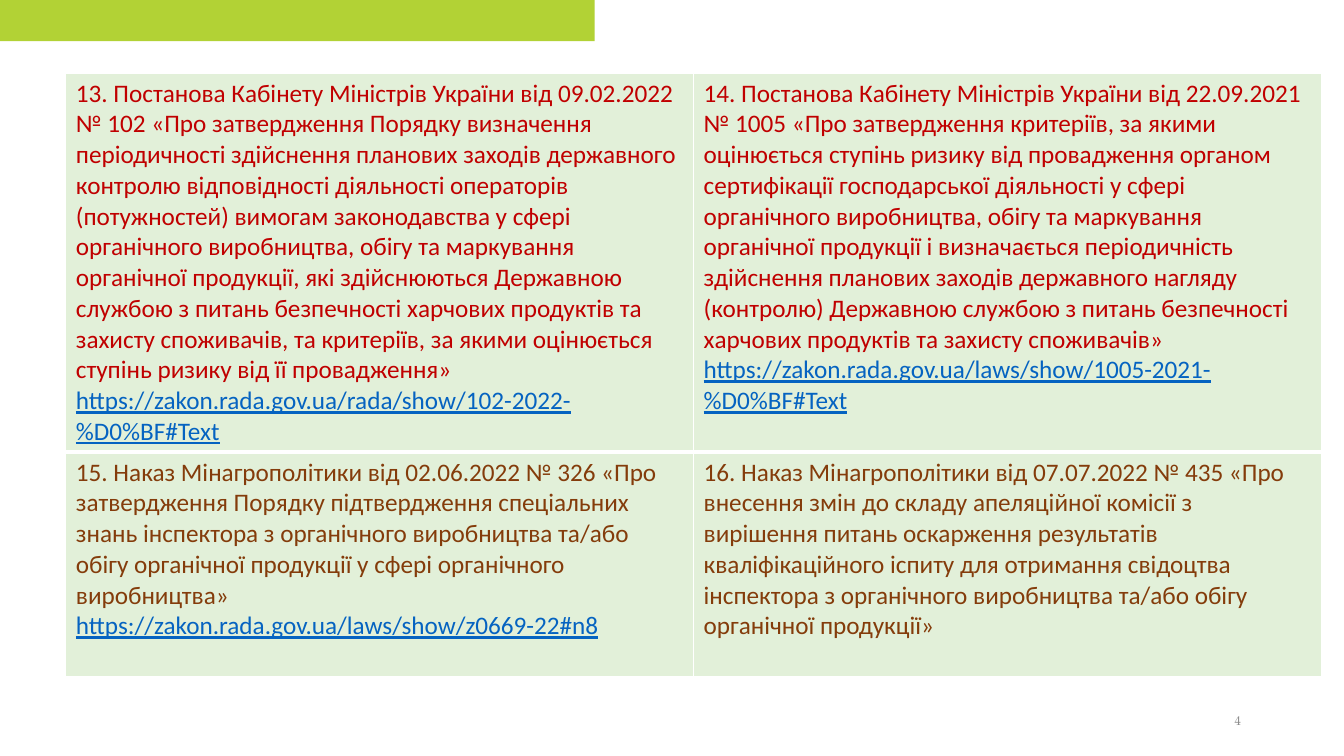
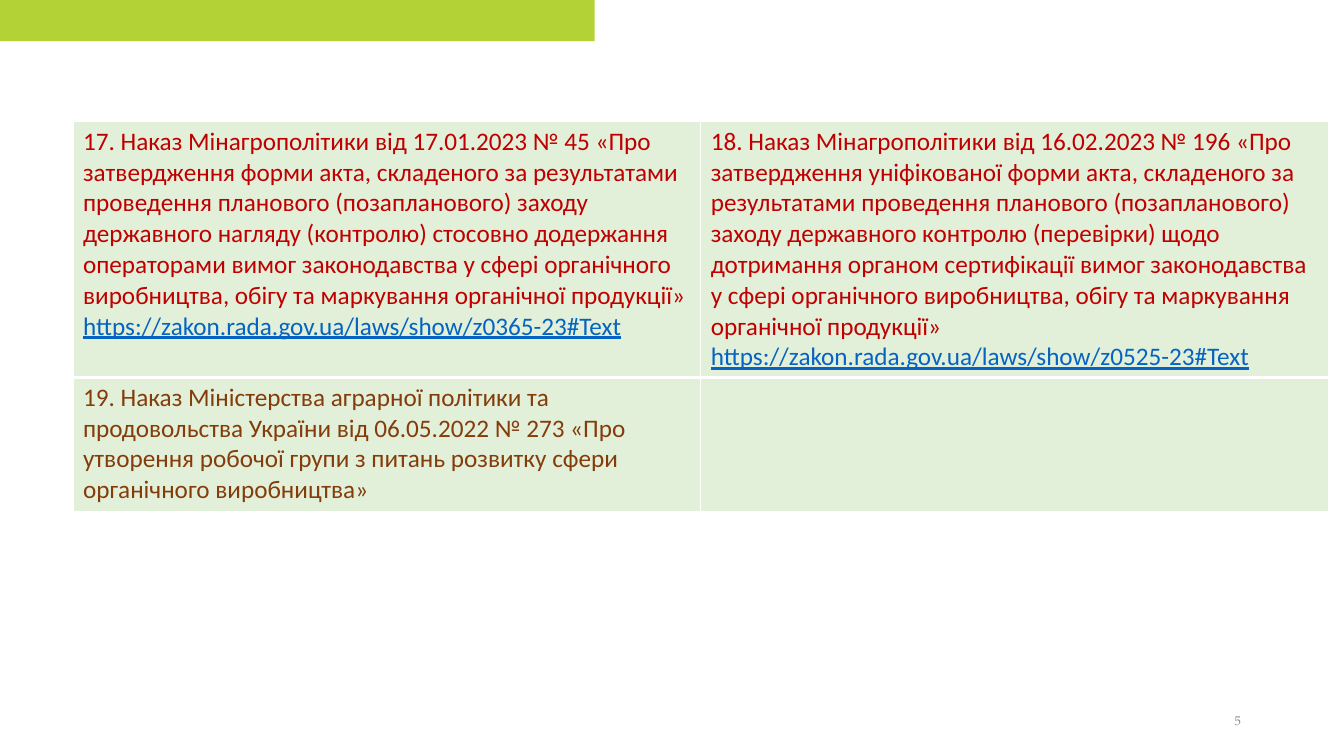
"""Build two slides listing the legal acts on organic production."""
from lxml import etree
from pptx import Presentation
from pptx.dml.color import RGBColor
from pptx.enum.shapes import MSO_SHAPE
from pptx.enum.text import MSO_ANCHOR, PP_ALIGN
from pptx.oxml.ns import qn
from pptx.util import Cm, Pt

RECTANGLE = MSO_SHAPE.RECTANGLE
MIDDLE = MSO_ANCHOR.MIDDLE
RIGHT = PP_ALIGN.RIGHT

COLORS = {
    "band": "B2D235",
    "cell": "E2F0D9",
    "border": "FFFFFF",
    "link": "0563C1",
    "number": "8C8C8C",
}
ROW_COLORS = ["C00000", "843C0B"]
LINK_START = "https://"
COLUMN_WIDTH = Cm(15.82)

PAGES = [
    {
        "number": 4,
        "left": 1.66,
        "top": 1.84,
        "heights": [9.55, 5.66],
        "rows": [
            [
                [
                    "13. Постанова Кабінету Міністрів України від 09.02.2022 № 102 «Про затвердження Порядку визначення періодичності здійснення планових заходів державного контролю відповідності діяльності операторів (потужностей) вимогам законодавства у сфері органічного виробництва, обігу та маркування органічної продукції, які здійснюються Державною службою з питань безпечності харчових продуктів та захисту споживачів, та критеріїв, за якими оцінюється ступінь ризику від її провадження»",
                    "https://zakon.rada.gov.ua/rada/show/102-2022-%D0%BF#Text",
                ],
                [
                    "14. Постанова Кабінету Міністрів України від 22.09.2021 № 1005 «Про затвердження критеріїв, за якими оцінюється ступінь ризику від провадження органом сертифікації господарської діяльності у сфері органічного виробництва, обігу та маркування органічної продукції і визначається періодичність здійснення планових заходів державного нагляду (контролю) Державною службою з питань безпечності харчових продуктів та захисту споживачів»",
                    "https://zakon.rada.gov.ua/laws/show/1005-2021-%D0%BF#Text",
                ],
            ],
            [
                [
                    "15. Наказ Мінагрополітики від 02.06.2022 № 326 «Про затвердження Порядку підтвердження спеціальних знань інспектора з органічного виробництва та/або обігу органічної продукції у сфері органічного виробництва» https://zakon.rada.gov.ua/laws/show/z0669-22#n8",
                ],
                [
                    "16. Наказ Мінагрополітики від 07.07.2022 № 435 «Про внесення змін до складу апеляційної комісії з вирішення питань оскарження результатів кваліфікаційного іспиту для отримання свідоцтва",
                    "інспектора з органічного виробництва та/або обігу органічної продукції»",
                ],
            ],
        ],
    },
    {
        "number": 5,
        "left": 1.84,
        "top": 3.06,
        "heights": [6.45, 3.37],
        "rows": [
            [
                [
                    "17. Наказ Мінагрополітики від 17.01.2023 № 45 «Про затвердження форми акта, складеного за результатами проведення планового (позапланового) заходу державного нагляду (контролю) стосовно додержання операторами вимог законодавства у сфері органічного виробництва, обігу та маркування органічної продукції»",
                    "https://zakon.rada.gov.ua/laws/show/z0365-23#Text",
                ],
                [
                    "18. Наказ Мінагрополітики від 16.02.2023 № 196 «Про затвердження уніфікованої форми акта, складеного за результатами проведення планового (позапланового) заходу державного контролю (перевірки) щодо дотримання органом сертифікації вимог законодавства у сфері органічного виробництва, обігу та маркування органічної продукції» https://zakon.rada.gov.ua/laws/show/z0525-23#Text",
                ],
            ],
            [
                [
                    "19. Наказ Міністерства аграрної політики та продовольства України від 06.05.2022 № 273 «Про утворення робочої групи з питань розвитку сфери органічного виробництва»",
                ],
                [],
            ],
        ],
    },
]


def set_font(font, name, size, color):
    font.name = name
    font.size = Pt(size)
    font.color.rgb = RGBColor.from_string(color)


def style_cell(cell, widths):
    cell.fill.solid()
    cell.fill.fore_color.rgb = RGBColor.from_string(COLORS["cell"])
    properties = cell._tc.get_or_add_tcPr()
    for index, (side, width) in enumerate(widths.items()):
        line = etree.Element(qn(f"a:ln{side}"), w=str(Pt(width)))
        fill = etree.SubElement(line, qn("a:solidFill"))
        etree.SubElement(fill, qn("a:srgbClr"), val=COLORS["border"])
        properties.insert(index, line)


deck = Presentation()
deck.slide_width = Cm(33.87)
deck.slide_height = Cm(19.05)

for content in PAGES:
    page = deck.slides.add_slide(deck.slide_layouts[6])

    band = page.shapes.add_shape(RECTANGLE, 0, 0, Cm(14.99), Cm(1.04))
    band.shadow.inherit = False
    band.fill.solid()
    band.fill.fore_color.rgb = RGBColor.from_string(COLORS["band"])
    band.line.fill.background()

    number_box = page.shapes.add_textbox(Cm(30.33), Cm(17.65), Cm(1.19), Cm(1.02))
    number_box.text_frame.word_wrap = True
    number_box.text_frame.vertical_anchor = MIDDLE
    para = number_box.text_frame.paragraphs[0]
    para.text = str(content["number"])
    para.alignment = RIGHT
    set_font(para.font, "TeX Gyre Pagella", 9, COLORS["number"])

    table = page.shapes.add_table(
        2, 2, Cm(content["left"]), Cm(content["top"]),
        2 * COLUMN_WIDTH, Cm(sum(content["heights"])),
    ).table
    table.first_row = False
    table.horz_banding = False
    for column in table.columns:
        column.width = COLUMN_WIDTH

    for row_index, row in enumerate(content["rows"]):
        table.rows[row_index].height = Cm(content["heights"][row_index])
        top, bottom = [(1, 3), (3, 1)][row_index]
        for column_index, lines in enumerate(row):
            cell = table.cell(row_index, column_index)
            style_cell(cell, {"L": 1, "R": 1, "T": top, "B": bottom})
            frame = cell.text_frame
            for line_index, text in enumerate(lines):
                para = frame.add_paragraph() if line_index else frame.paragraphs[0]
                set_font(para.font, "Calibri", 18, ROW_COLORS[row_index])
                wording, start, address = text.partition(LINK_START)
                if wording:
                    para.add_run().text = wording
                if address:
                    span = para.add_run()
                    span.text = start + address
                    span.font.underline = True
                    span.font.color.rgb = RGBColor.from_string(COLORS["link"])

deck.save("out.pptx")
